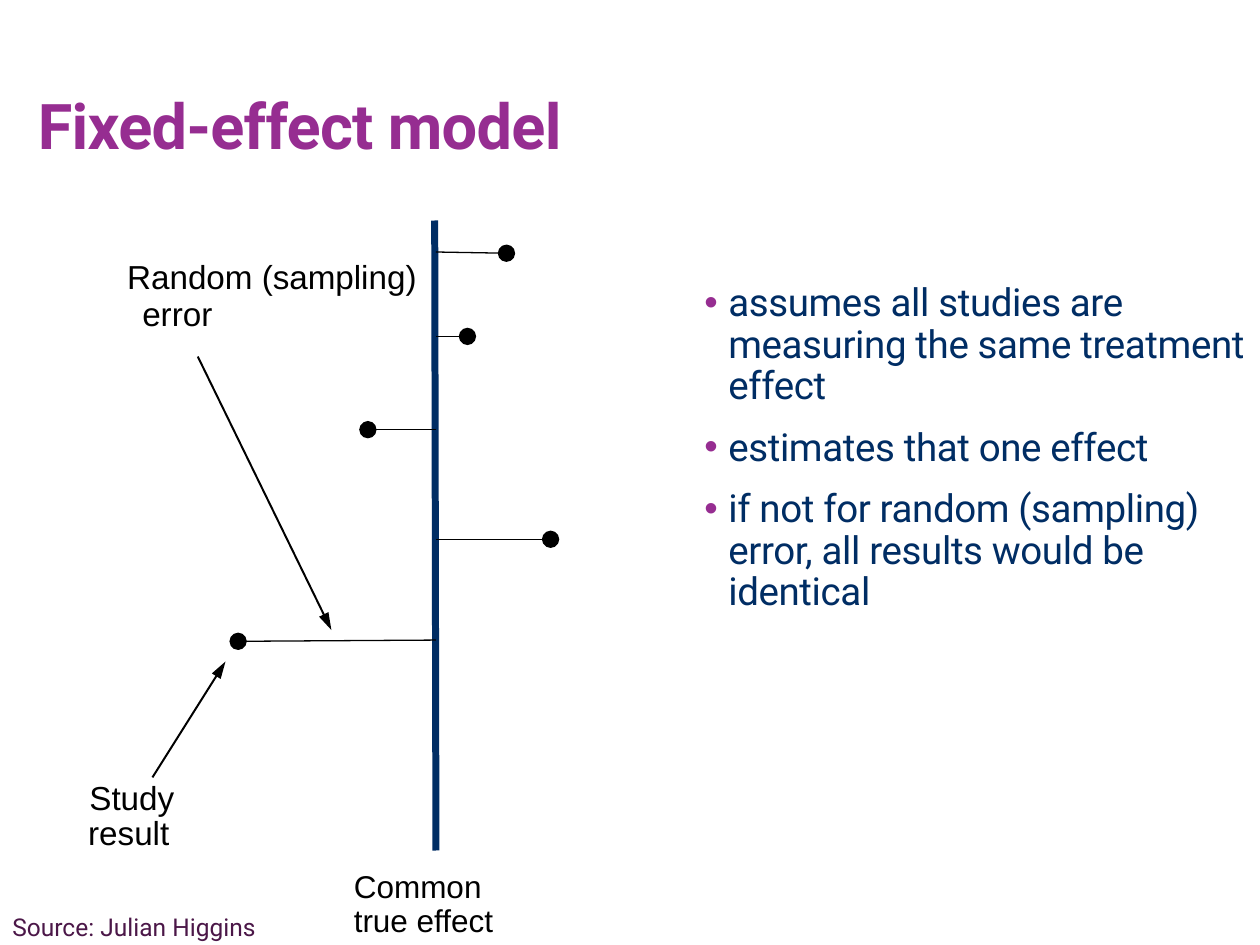
from lxml import etree
from pptx import Presentation, util as u
from pptx.dml.color import RGBColor
from pptx.enum import shapes, text
from pptx.oxml.ns import qn

COLORS = {"purple": "962D91", "navy": "002D64", "black": "000000", "plum": "4B1748"}
TITLE = "Fixed-effect model"
POINTS = [
    "assumes all studies are measuring the same treatment effect",
    "estimates that one effect",
    "if not for random (sampling) error, all results would be identical",
]
EFFECT_X = 3.46
# height of the study on the true-effect line, then the end of its error line
STUDIES = [
    (2.0, (4.02, 2.01)),
    (2.67, (3.71, 2.67)),
    (3.41, (2.92, 3.41)),
    (4.28, (4.37, 4.28)),
    (5.08, (1.89, 5.09)),
]
POINTERS = [((1.57, 2.83), (2.63, 5.0)), ((1.21, 6.17), (1.79, 5.25))]
TIGHT_LABELS = [
    ("Random (sampling)", (1.01, 2.03, 2.34, 0.32)),
    ("error", (1.13, 2.33, 0.57, 0.32)),
    ("Study", (0.71, 6.17, 0.68, 0.32)),
    ("result", (0.70, 6.45, 0.65, 0.32)),
]
AXIS_LABELS = [
    ("Common", (2.71, 6.83, 1.5, 0.4)),
    ("true effect", (2.71, 7.1, 1.5, 0.4)),
]
SOURCE = ("Source: Julian Higgins", (0, 7.19, 2.17, 0.34))


def rgb(name):
    return RGBColor.from_string(COLORS[name])


def add_run(paragraph, words, size, font, color, bold=False, spacing=0):
    run = paragraph.add_run()
    run.text = words
    run.font.size, run.font.name, run.font.bold = u.Pt(size), font, bold
    run.font.color.rgb = rgb(color)
    if spacing:
        run.font._element.set("spc", str(round(spacing * 100)))


def remove_insets(frame):
    frame.margin_left = frame.margin_top = frame.margin_right = frame.margin_bottom = 0


def add_box(slide, place, tight=False, wrap=True):
    frame = slide.shapes.add_textbox(*map(u.Inches, place)).text_frame
    frame.word_wrap = wrap
    if tight:
        remove_insets(frame)
    return frame


def add_line(slide, start, end, color, width, tail=None, tail_width="lg"):
    line = slide.shapes.add_connector(
        shapes.MSO_CONNECTOR.STRAIGHT, *map(u.Inches, (*start, *end)))
    line.line.color.rgb = rgb(color)
    line.line.width = u.Pt(width)
    if tail:
        etree.SubElement(line.line._get_or_add_ln(), qn("a:tailEnd"),
                         type=tail, w=tail_width, len="lg")
    etree.SubElement(line._element.spPr, qn("a:effectLst"))


def add_bullet(paragraph, color):
    props = paragraph._p.get_or_add_pPr()
    indent = u.Inches(0.19)
    props.set("marL", str(indent))
    props.set("indent", str(-indent))
    bullet_color = etree.SubElement(props, qn("a:buClr"))
    etree.SubElement(bullet_color, qn("a:srgbClr"), val=COLORS[color])
    etree.SubElement(props, qn("a:buFont"), typeface="Arial")
    etree.SubElement(props, qn("a:buChar"), char="•")


def add_title(slide):
    title = slide.shapes.title
    title.left, title.top, title.width, title.height = map(u.Inches, (0.3, 0.35, 9.7, 0.94))
    frame = title.text_frame
    remove_insets(frame)
    frame.auto_size = text.MSO_AUTO_SIZE.NONE
    frame.vertical_anchor = text.MSO_ANCHOR.BOTTOM
    frame.paragraphs[0].alignment = text.PP_ALIGN.LEFT
    add_run(frame.paragraphs[0], TITLE, 36, "Roboto", "purple", bold=True, spacing=-0.4)


def add_points(slide):
    frame = add_box(slide, (5.59, 2.25, 4.41, 4.52), tight=True)
    for i, point in enumerate(POINTS):
        paragraph = frame.add_paragraph() if i else frame.paragraphs[0]
        add_bullet(paragraph, "purple")
        paragraph.line_spacing = 0.9
        if i:
            paragraph.space_before = u.Pt(11.3)
        add_run(paragraph, point, 22, "Roboto", "navy", spacing=-0.2)


def add_diagram(slide):
    add_line(slide, (EFFECT_X, 6.75), (3.45, 1.75), "navy", 4)
    for y, result in STUDIES:
        add_line(slide, (EFFECT_X, y), result, "black", 0.75, "oval")
    for start, end in POINTERS:
        add_line(slide, start, end, "black", 1.13, "triangle", "med")
    for words, place in TIGHT_LABELS:
        label = add_box(slide, place, tight=True, wrap=False)
        add_run(label.paragraphs[0], words, 19, "Arial", "black")
    for words, place in AXIS_LABELS:
        add_run(add_box(slide, place).paragraphs[0], words, 18, "Arial", "black")


def main():
    deck = Presentation()
    deck.slide_width, deck.slide_height = u.Inches(10), u.Inches(7.5)
    slide = deck.slides.add_slide(deck.slide_layouts.get_by_name("Title Only"))
    add_title(slide)
    add_points(slide)
    add_diagram(slide)
    words, place = SOURCE
    add_run(add_box(slide, place).paragraphs[0], words, 14, "Roboto", "plum")
    deck.save("out.pptx")


if __name__ == "__main__":
    main()
